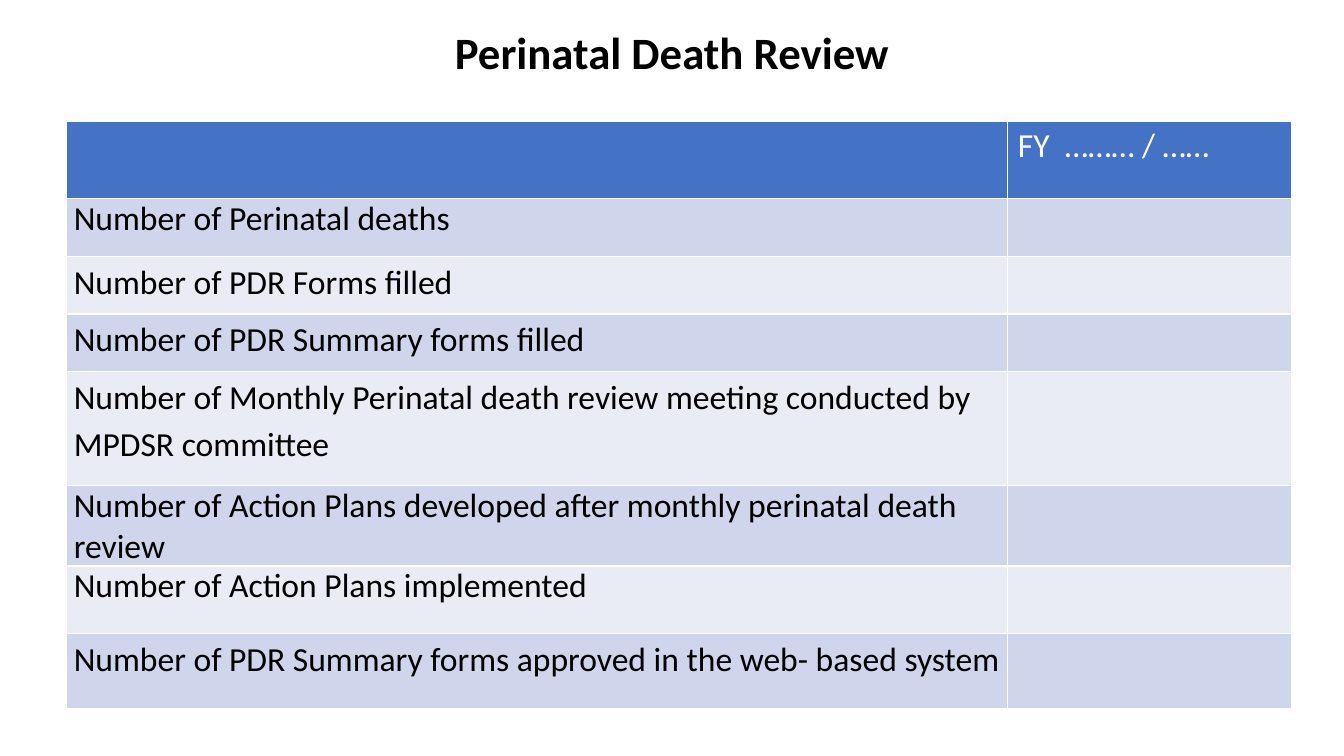
from pptx import Presentation
from pptx import util as u
from pptx.dml.color import RGBColor
from pptx.enum import text

BLACK = RGBColor(0x00, 0x00, 0x00)
WHITE = RGBColor(0xFF, 0xFF, 0xFF)
HEADER_BLUE = RGBColor(0x44, 0x72, 0xC4)
BAND_DARK = RGBColor(0xCF, 0xD5, 0xEA)
BAND_LIGHT = RGBColor(0xE9, 0xEB, 0xF5)

INDICATORS = [
    ("Number of Perinatal deaths", 1.45, 1),
    ("Number of PDR Forms filled", 1.45, 1.15),
    ("Number of PDR Summary forms filled", 1.45, 1.15),
    ("Number of Monthly Perinatal death review meeting conducted by MPDSR committee", 2.87, 1.15),
    ("Number of Action Plans developed after monthly perinatal death review", 1.7, 1),
    ("Number of Action Plans implemented", 1.7, 1),
    ("Number of PDR Summary forms approved in the web- based system", 1.9, 1.15),
]


def write(frame, words, size, color, bold=False, spacing=1.0):
    frame.text = words
    para = frame.paragraphs[0]
    para.line_spacing = float(spacing)
    font = para.runs[0].font
    font.name = "Calibri"
    font.size = u.Pt(size)
    font.bold = bold
    font.color.rgb = color
    return para


deck = Presentation()
deck.slide_width = u.Cm(33.87)
deck.slide_height = u.Cm(19.05)
page = deck.slides.add_slide(deck.slide_layouts[6])

title = page.shapes.add_textbox(u.Cm(2.33), u.Cm(0.46), u.Cm(29.21), u.Cm(1.85))
title.text_frame.word_wrap = True
title.text_frame.vertical_anchor = text.MSO_ANCHOR.MIDDLE
heading = write(title.text_frame, "Perinatal Death Review", 32, BLACK, True, 0.9)
heading.alignment = text.PP_ALIGN.CENTER

table = page.shapes.add_table(
    len(INDICATORS) + 1, 2, u.Cm(1.68), u.Cm(3.05), u.Cm(30.88), u.Cm(14.48)
).table
table.columns[0].width = u.Cm(23.72)
table.columns[1].width = u.Cm(7.16)

table.rows[0].height = u.Cm(1.96)
write(table.cell(0, 1).text_frame, "FY\u00a0 ……… / ……".replace("\u00a0", " "), 24, WHITE)

for row, (indicator, height, spacing) in enumerate(INDICATORS, start=1):
    table.rows[row].height = u.Cm(height)
    cell = table.cell(row, 0)
    cell.margin_left = cell.margin_right = u.Cm(0.18)
    cell.margin_top = cell.margin_bottom = 0
    write(cell.text_frame, indicator, 24, BLACK, spacing=spacing)

for row in range(len(table.rows)):
    band = HEADER_BLUE if row == 0 else BAND_DARK if row % 2 else BAND_LIGHT
    for column in range(2):
        cell = table.cell(row, column)
        cell.fill.solid()
        cell.fill.fore_color.rgb = band

deck.save("out.pptx")
